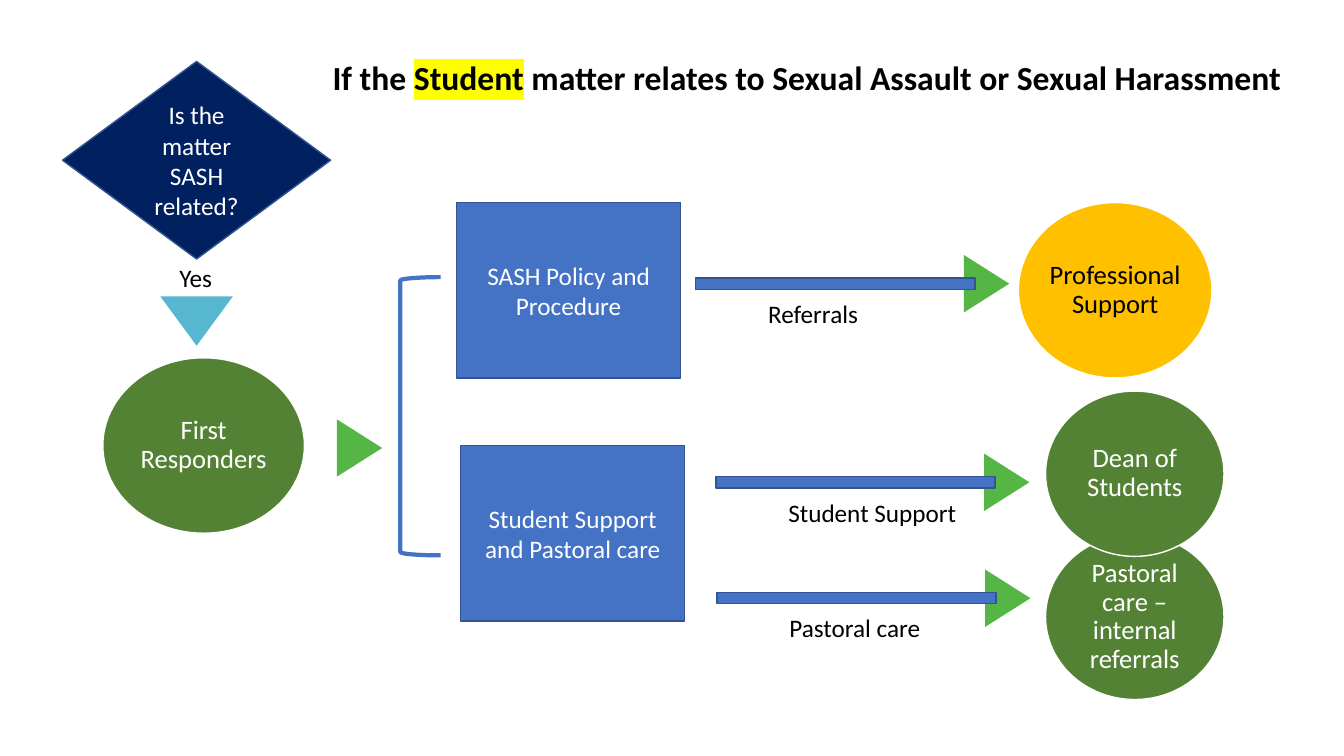
from lxml.etree import SubElement
from pptx import Presentation
from pptx.dml.color import RGBColor
from pptx.enum.shapes import MSO_SHAPE
from pptx.enum.text import MSO_ANCHOR, MSO_AUTO_SIZE, PP_ALIGN
from pptx.oxml.ns import qn
from pptx.util import Inches, Pt

COLOURS = {
    "navy": "002060", "blue": "4472C4", "outline": "325491", "teal": "57B7D1",
    "arrow": "55B646", "green": "548235", "gold": "FFC000",
    "white": "FFFFFF", "black": "000000", "highlight": "FFFF00",
}
FONT = "Calibri"

# Content: text, then left, top, width, height in inches
TITLE_RUNS = [("If the ", False), ("Student", True),
              (" matter relates to Sexual Assault or Sexual Harassment", False)]
TITLE_PLACE = (3.2, 0.52, 9.64, 0.5)
QUESTION = ("Is the matter SASH related?", (0.62, 0.61, 2.66, 1.96))
ANSWER = ("Yes", (1.68, 2.55, 0.53, 0.4))
PROCESSES = [
    ("SASH Policy and Procedure", (4.53, 2.01, 2.22, 1.74)),
    ("Student Support and Pastoral care", (4.57, 4.42, 2.22, 1.74)),
]
# Later circles lie in front of earlier ones
CIRCLES = [
    ("First Responders", (1.02, 3.55, 2, 1.74), "green", "white"),
    ("Pastoral care – internal referrals", (10.37, 5.3, 1.77, 1.64), "green", "white"),
    ("Professional Support", (10.1, 2.01, 1.92, 1.74), "gold", "black"),
    ("Dean of Students", (10.37, 3.88, 1.77, 1.64), "green", "white"),
]
# Label, label width, left and top of the bar
REFERRALS = [
    ("Referrals", 1.1, 6.9, 2.76),
    ("Student Support", 1.89, 7.1, 4.73),
    ("Pastoral care", 1.51, 7.11, 5.88),
]
# Left, top, width, height, rotation, fill
POINTERS = [
    (1.59, 2.94, 0.72, 0.49, 180, "teal"),
    (3.28, 4.22, 0.57, 0.45, 90, "arrow"),
]
BRACKET_PLACE = (3.97, 2.75, 0.4, 2.76)


def colour(name):
    return RGBColor.from_string(COLOURS[name])


def style_span(span, size, ink, bold=False):
    span.font.name = FONT
    span.font.size = Pt(size)
    span.font.bold = bold
    span.font.color.rgb = colour(ink)


def add_box(page, kind, place, fill=None, line=None, weight=1):
    box = page.shapes.add_shape(kind, *map(Inches, place))
    box.shadow.inherit = False
    if fill:
        box.fill.solid()
        box.fill.fore_color.rgb = colour(fill)
    else:
        box.fill.background()
    if line:
        box.line.color.rgb = colour(line)
        box.line.width = Pt(weight)
    else:
        box.line.fill.background()
    return box


def write_centred(box, text, size, ink):
    frame = box.text_frame
    frame.word_wrap = True
    frame.vertical_anchor = MSO_ANCHOR.MIDDLE
    frame.text = text
    para = frame.paragraphs[0]
    para.alignment = PP_ALIGN.CENTER
    style_span(para.runs[0], size, ink)
    return frame


def add_label(page, place):
    frame = page.shapes.add_textbox(*map(Inches, place)).text_frame
    frame.word_wrap = False
    frame.auto_size = MSO_AUTO_SIZE.SHAPE_TO_FIT_TEXT
    return frame.paragraphs[0]


def add_plain_label(page, text, place):
    para = add_label(page, place)
    para.text = text
    style_span(para.runs[0], 18, "black")


def add_pointer(page, left, top, width, height, rotation, fill):
    pointer = add_box(page, MSO_SHAPE.ISOSCELES_TRIANGLE, (left, top, width, height), fill)
    pointer.rotation = rotation


def highlight(span):
    properties = span.font._element
    mark = SubElement(properties, qn("a:highlight"))
    SubElement(mark, qn("a:srgbClr")).set("val", COLOURS["highlight"])
    properties.find(qn("a:solidFill")).addnext(mark)


def add_title(page):
    para = add_label(page, TITLE_PLACE)
    for text, marked in TITLE_RUNS:
        span = para.add_run()
        span.text = text
        style_span(span, 24, "black", bold=True)
        if marked:
            highlight(span)


def add_circle(page, text, place, fill, ink):
    frame = write_centred(add_box(page, MSO_SHAPE.OVAL, place, fill, "white"), text, 19, ink)
    frame.margin_left = frame.margin_right = frame.margin_top = frame.margin_bottom = 0
    frame.paragraphs[0].line_spacing = 0.9


def add_referral(page, text, width, left, top):
    add_pointer(page, left + 2.6, top - 0.17, 0.57, 0.45, 90, "arrow")
    add_box(page, MSO_SHAPE.RECTANGLE, (left, top, 2.77, 0.11), "blue", "outline")
    add_plain_label(page, text, (left + 0.62, top + 0.15, width, 0.4))


def main():
    deck = Presentation()
    deck.slide_width, deck.slide_height = Inches(13.33), Inches(7.5)
    page = deck.slides.add_slide(deck.slide_layouts[6])

    # Title and opening question
    add_title(page)
    text, place = QUESTION
    write_centred(add_box(page, MSO_SHAPE.DIAMOND, place, "navy", "outline"), text, 18, "white")
    add_plain_label(page, *ANSWER)

    # Pointers and bracket leading to the processes
    for pointer in POINTERS:
        add_pointer(page, *pointer)
    add_box(page, MSO_SHAPE.LEFT_BRACKET, BRACKET_PLACE, line="blue", weight=3)

    # Processes, referral arrows and the people involved
    for text, place in PROCESSES:
        box = add_box(page, MSO_SHAPE.RECTANGLE, place, "blue", "outline")
        write_centred(box, text, 18, "white")
    for referral in REFERRALS:
        add_referral(page, *referral)
    for circle in CIRCLES:
        add_circle(page, *circle)

    deck.save("out.pptx")


if __name__ == "__main__":
    main()
